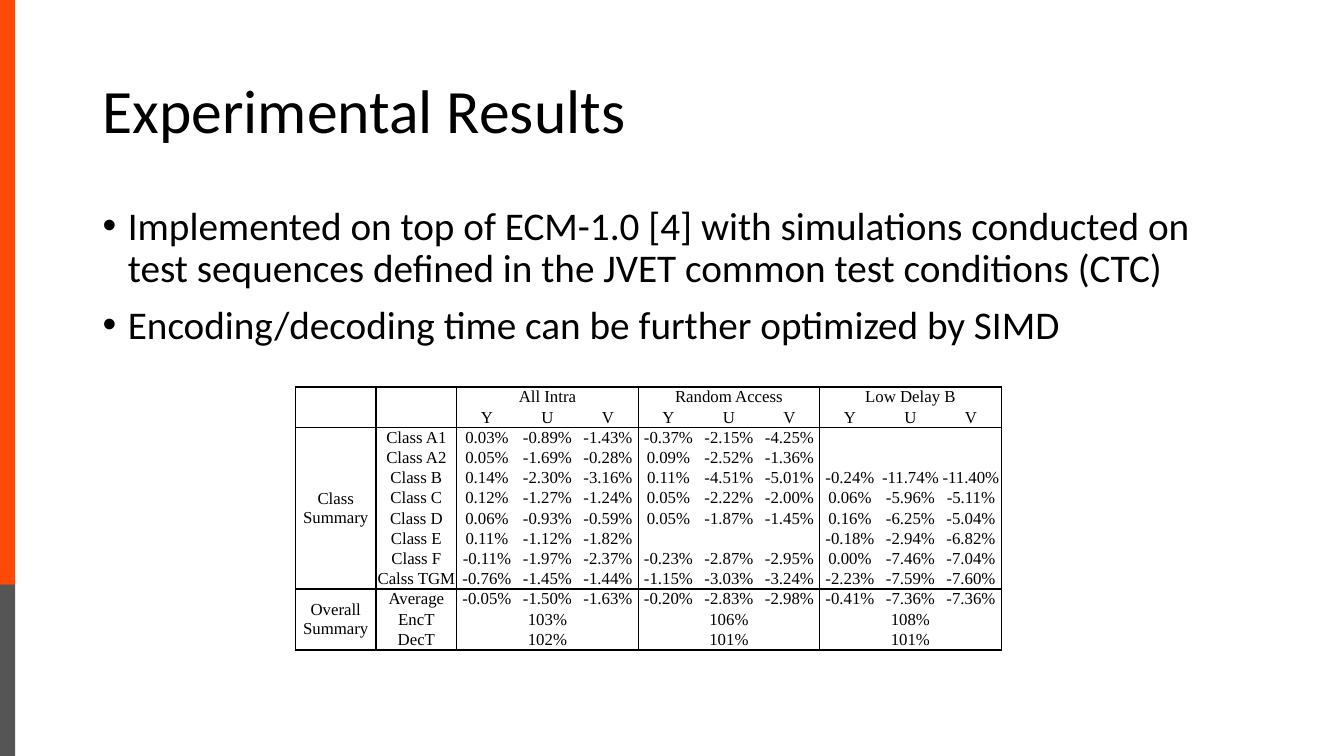
"""Build a slide with two bullets and a table of coding results."""
from lxml import etree
from pptx import Presentation
from pptx.dml.color import RGBColor
from pptx.enum.shapes import MSO_SHAPE
from pptx.enum.text import MSO_ANCHOR, PP_ALIGN
from pptx.oxml.ns import qn
from pptx.util import Inches, Pt

RECT = MSO_SHAPE.RECTANGLE
MIDDLE = MSO_ANCHOR.MIDDLE
TOP = MSO_ANCHOR.TOP
CENTER = PP_ALIGN.CENTER
BLACK = RGBColor(0x00, 0x00, 0x00)
ORANGE = RGBColor(0xFF, 0x49, 0x06)
GRAY = RGBColor(0x55, 0x55, 0x55)
SANS = "Calibri"
SERIF = "Times New Roman"
UNIT = Inches(0.1)
TITLE = "Experimental Results"
POINTS = (
    "Implemented on top of ECM-1.0 [4] with simulations conducted on "
    "test sequences defined in the JVET common test conditions (CTC)",
    "Encoding/decoding time can be further optimized by SIMD",
)
ROWS = (
    ";All Intra;Random Access;Low Delay B",
    ";Y,U,V;Y,U,V;Y,U,V",
    "Class A1;0.03%,-0.89%,-1.43%;-0.37%,-2.15%,-4.25%;",
    "Class A2;0.05%,-1.69%,-0.28%;0.09%,-2.52%,-1.36%;",
    "Class B;0.14%,-2.30%,-3.16%;0.11%,-4.51%,-5.01%;-0.24%,-11.74%,-11.40%",
    "Class C;0.12%,-1.27%,-1.24%;0.05%,-2.22%,-2.00%;0.06%,-5.96%,-5.11%",
    "Class D;0.06%,-0.93%,-0.59%;0.05%,-1.87%,-1.45%;0.16%,-6.25%,-5.04%",
    "Class E;0.11%,-1.12%,-1.82%;;-0.18%,-2.94%,-6.82%",
    "Class F;-0.11%,-1.97%,-2.37%;-0.23%,-2.87%,-2.95%;0.00%,-7.46%,-7.04%",
    "Calss TGM;-0.76%,-1.45%,-1.44%;-1.15%,-3.03%,-3.24%;-2.23%,-7.59%,-7.60%",
    "Average;-0.05%,-1.50%,-1.63%;-0.20%,-2.83%,-2.98%;-0.41%,-7.36%,-7.36%",
    "EncT;103%;106%;108%",
    "DecT;102%;101%;101%",
)
BANDS = ((0, 2, ()), (2, 10, ("Class", "Summary")), (10, 13, ("Overall", "Summary")))
COLS = (8, 8) + (6,) * 9
ACROSS = {0: 1, 2: 1.5, 10: 1.5, 13: 1.5}
DOWN = {0: 1, 1: 1, 2: 1, 5: 1, 8: 1, 11: 1}


def grid(*cells):
    """Turn grid counts into lengths."""
    return [round(n * UNIT) for n in cells]


def add_bar(slide, place, color):
    """Draw one part of the side stripe."""
    bar = slide.shapes.add_shape(RECT, *grid(*place))
    bar.shadow.inherit = False
    bar.fill.solid()
    bar.fill.fore_color.rgb = color
    bar.line.fill.background()


def add_run(para, text, font, size):
    """Append one styled run."""
    run = para.add_run()
    run.text = text
    run.font.name = font
    run.font.size = Pt(size)
    run.font.color.rgb = BLACK


def add_mark(para):
    """Give a paragraph a hanging round bullet."""
    props = para._p.get_or_add_pPr()
    props.set("marL", str(Inches(0.25)))
    props.set("indent", str(-Inches(0.25)))
    etree.SubElement(props, qn("a:buFont"), typeface="Arial")
    etree.SubElement(props, qn("a:buChar"), char="•")


def add_text(slide, place, lines, size, anchor, marked=False):
    """Add a text box with one paragraph for each line."""
    frame = slide.shapes.add_textbox(*grid(*place)).text_frame
    frame.word_wrap = True
    frame.vertical_anchor = anchor
    for i, line in enumerate(lines):
        para = frame.add_paragraph() if i else frame.paragraphs[0]
        para.line_spacing = 0.9
        if i:
            para.space_before = Pt(10)
        if marked:
            add_mark(para)
        add_run(para, line, SANS, size)


def set_edge(props, tag, width):
    """Add one cell border, or an empty one for no width."""
    edge = etree.SubElement(props, qn(tag), w=str(Pt(width)))
    if width:
        fill = etree.SubElement(edge, qn("a:solidFill"))
        etree.SubElement(fill, qn("a:srgbClr"), val=str(BLACK))
    else:
        etree.SubElement(edge, qn("a:noFill"))


def style_cell(cell, row, col):
    """Set margins, borders and fill by the cell's place."""
    cell.margin_left = cell.margin_right = 0
    cell.margin_top = cell.margin_bottom = 0
    cell.vertical_anchor = MIDDLE
    high = cell.span_height if cell.is_merge_origin else 1
    wide = cell.span_width if cell.is_merge_origin else 1
    props = cell._tc.get_or_add_tcPr()
    set_edge(props, "a:lnL", DOWN.get(col, 0))
    set_edge(props, "a:lnR", DOWN.get(col + wide, 0))
    set_edge(props, "a:lnT", ACROSS.get(row, 0))
    set_edge(props, "a:lnB", ACROSS.get(row + high, 0))
    cell.fill.background()
    for para in cell.text_frame.paragraphs:
        if not para.runs:
            etree.SubElement(para._p, qn("a:endParaRPr"), sz="1200")


def fill_cell(cell, lines):
    """Write centred lines into a cell."""
    frame = cell.text_frame
    for i, line in enumerate(lines):
        para = frame.add_paragraph() if i else frame.paragraphs[0]
        para.alignment = CENTER
        add_run(para, line, SERIF, 12)


def fill_row(table, row, text):
    """Write a row's label and its three groups, joining lone values."""
    label, *groups = text.split(";")
    if label:
        fill_cell(table.cell(row, 1), [label])
    for i, group in enumerate(groups):
        col = 2 + 3 * i
        if group and "," not in group:
            table.cell(row, col).merge(table.cell(row, col + 2))
        for j, value in enumerate(group.split(",") if group else ()):
            fill_cell(table.cell(row, col + j), [value])


def add_grid(slide, left, top):
    """Build the table of results."""
    place = grid(left, top, sum(COLS), 2 * len(ROWS))
    table = slide.shapes.add_table(len(ROWS), len(COLS), *place).table
    table.first_row = table.horz_banding = False
    for col, wide in zip(table.columns, COLS):
        col.width = round(wide * UNIT)
    for row in table.rows:
        row.height = 2 * UNIT
    for start, stop, lines in BANDS:
        table.cell(start, 0).merge(table.cell(stop - 1, 0))
        fill_cell(table.cell(start, 0), lines)
    table.cell(0, 1).merge(table.cell(1, 1))
    for i, text in enumerate(ROWS):
        fill_row(table, i, text)
    for i in range(len(ROWS)):
        for j in range(len(COLS)):
            style_cell(table.cell(i, j), i, j)


def main():
    """Build and save the slide."""
    deck = Presentation()
    deck.slide_width, deck.slide_height = Inches(13.33), Inches(7.5)
    slide = deck.slides.add_slide(deck.slide_layouts[6])
    add_bar(slide, (-0.2, 0, 1.7, 58.1), ORANGE)
    add_bar(slide, (-0.2, 58, 1.7, 17), GRAY)
    add_text(slide, (9.2, 4, 115, 14.5), [TITLE], 44, MIDDLE)
    add_text(slide, (9.2, 20, 115, 47.6), POINTS, 28, TOP, True)
    add_grid(slide, 29.3, 38.4)
    deck.save("out.pptx")


if __name__ == "__main__":
    main()
